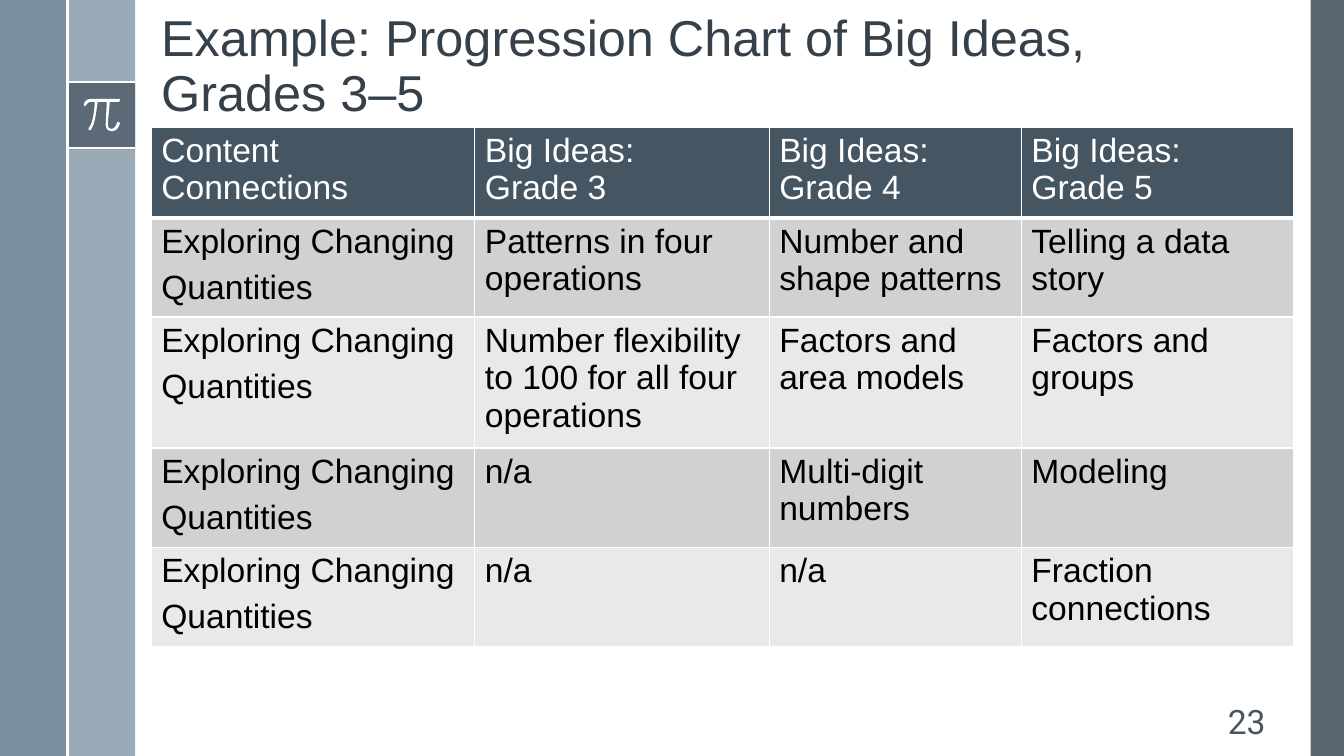
from lxml import etree
from pptx import Presentation
from pptx.dml.color import RGBColor
from pptx.enum.shapes import MSO_CONNECTOR, MSO_SHAPE
from pptx.enum.text import MSO_ANCHOR, PP_ALIGN
from pptx.oxml.ns import qn
from pptx.util import Inches, Pt

WHITE = RGBColor(0xFF, 0xFF, 0xFF)
BLACK = RGBColor(0x00, 0x00, 0x00)
SLATE = RGBColor(0x47, 0x55, 0x62)
STEEL = RGBColor(0x6A, 0x80, 0x93)
MIST = RGBColor(0x9B, 0xAA, 0xB7)
TITLE_COLOR = RGBColor(0x35, 0x40, 0x4A)
HEADER = RGBColor(0x46, 0x55, 0x62)
BANDS = (RGBColor(0xCF, 0xD1, 0xD3), RGBColor(0xE9, 0xE9, 0xEA))

TITLE = "Example: Progression Chart of Big Ideas, Grades 3–5"
PAGE_NUMBER = "23"
CONNECTION = "Exploring Changing\u00a0\nQuantities"
HEADINGS = ["Content Connections"] + [
    f"Big\u00a0Ideas:\u00a0\nGrade {grade}" for grade in (3, 4, 5)
]
BIG_IDEAS = [
    ("Patterns in four operations", "Number and shape patterns", "Telling a data story"),
    ("Number flexibility to 100 for all four operations", "Factors and area models", "Factors and groups"),
    ("n/a", "Multi-digit numbers", "Modeling"),
    ("n/a", "n/a", "Fraction connections"),
]
COLUMN_WIDTHS = (3.21, 2.92, 2.5, 2.7)
ROW_HEIGHTS = (0.39, 0.41, 0.41, 0.41, 0.41)

BARS = [
    (13, 0, 0.33, 7.5, SLATE, 90),
    (0.67, 0, 0.67, 7.5, MIST, 100),
    (0, 0, 0.67, 7.5, STEEL, 88),
    (0.67, 0.81, 0.67, 0.67, SLATE, 75),
]
RULES = [(0.67, 0.81, 1.34, 0.81), (0.67, 1.47, 1.34, 1.47), (0.67, 0, 0.67, 7.5)]

PI_START = (1.18, 0.98)
PI_OUTLINE = [
    (0.9, 0.98), (0.85, 0.98, 0.83, 1.03, 0.83, 1.04),
    (0.83, 1.04, 0.83, 1.05, 0.84, 1.05), (0.85, 1.05),
    (0.85, 1.05, 0.87, 1.01, 0.9, 1.01), (0.94, 1.01),
    (0.94, 1.05, 0.93, 1.22, 0.88, 1.27), (0.87, 1.28, 0.87, 1.28, 0.88, 1.29),
    (0.9, 1.29), (0.95, 1.23, 0.96, 1.05, 0.97, 1.01), (1.06, 1.01),
    (1.05, 1.22), (1.05, 1.22, 1.04, 1.26, 1.07, 1.29),
    (1.08, 1.3, 1.09, 1.3, 1.1, 1.3), (1.12, 1.3),
    (1.17, 1.3, 1.19, 1.23, 1.19, 1.22), (1.19, 1.22, 1.18, 1.21, 1.18, 1.21),
    (1.17, 1.21, 1.16, 1.21, 1.16, 1.22), (1.16, 1.22, 1.15, 1.27, 1.11, 1.28),
    (1.1, 1.28, 1.09, 1.28, 1.08, 1.27), (1.07, 1.26, 1.07, 1.23, 1.07, 1.22),
    (1.09, 1.01), (1.18, 1.01), (1.19, 1.01, 1.19, 1, 1.19, 1),
    (1.19, 0.99, 1.19, 0.98, 1.18, 0.98),
]


def paint(shape, color, opacity=100):
    shape.shadow.inherit = False
    shape.line.fill.background()
    shape.fill.solid()
    shape.fill.fore_color.rgb = color
    if opacity < 100:
        color_node = shape.fill._xPr.find(qn("a:solidFill"))[0]
        etree.SubElement(color_node, qn("a:alpha")).set("val", str(opacity * 1000))


def add_curved_outline(start, segments):
    builder = shapes.build_freeform(*map(Inches, start))
    builder.add_line_segments([tuple(map(Inches, segment[-2:])) for segment in segments])
    shape = builder.convert_to_shape()
    line_nodes = list(shape._element.iter(qn("a:lnTo")))
    for line_node, segment in zip(line_nodes, segments):
        if len(segment) == 2:
            continue
        curve = etree.Element(qn("a:cubicBezTo"))
        for x, y in zip(segment[::2], segment[1::2]):
            etree.SubElement(curve, qn("a:pt"), x=str(Inches(x) - shape.left), y=str(Inches(y) - shape.top))
        line_node.getparent().replace(line_node, curve)
    return shape


def write(text_frame, text, size, color, font="Arial", space_before=None):
    text_frame.word_wrap = True
    for index, line in enumerate(text.split("\n")):
        paragraph = text_frame.add_paragraph() if index else text_frame.paragraphs[0]
        if space_before is not None:
            paragraph.space_before = Pt(space_before)
        run = paragraph.add_run()
        run.text = line
        run.font.size = Pt(size)
        run.font.name = font
        run.font.bold = False
        run.font.color.rgb = color


def set_borders(cell, widths):
    properties = cell._tc.get_or_add_tcPr()
    for position, (side, width) in enumerate(widths.items()):
        border = etree.Element(qn(f"a:ln{side}"), w=str(Pt(width)))
        fill = etree.SubElement(border, qn("a:solidFill"))
        etree.SubElement(fill, qn("a:srgbClr"), val=str(WHITE))
        properties.insert(position, border)


presentation = Presentation()
presentation.slide_width = Inches(13.33)
presentation.slide_height = Inches(7.5)
slide = presentation.slides.add_slide(presentation.slide_layouts[6])
shapes = slide.shapes

for left, top, width, height, color, opacity in BARS:
    bar = shapes.add_shape(
        MSO_SHAPE.RECTANGLE, Inches(left), Inches(top), Inches(width), Inches(height)
    )
    paint(bar, color, opacity)

for ends in RULES:
    rule = shapes.add_connector(MSO_CONNECTOR.STRAIGHT, *map(Inches, ends))
    rule.line.color.rgb = WHITE
    rule.line.width = Pt(1.5)
    etree.SubElement(rule._element.spPr, qn("a:effectLst"))

paint(add_curved_outline(PI_START, PI_OUTLINE), WHITE)

title = shapes.add_textbox(Inches(1.5), Inches(-0.1), Inches(10.94), Inches(1.36))
title.text_frame.vertical_anchor = MSO_ANCHOR.BOTTOM
write(title.text_frame, TITLE, 36, TITLE_COLOR)
title.text_frame.paragraphs[0].line_spacing = 0.9

rows = [HEADINGS] + [(CONNECTION, *ideas) for ideas in BIG_IDEAS]
table = shapes.add_table(
    len(rows), len(COLUMN_WIDTHS), Inches(1.5), Inches(1.26),
    Inches(sum(COLUMN_WIDTHS)), Inches(sum(ROW_HEIGHTS)),
).table
table.horz_banding = False
for column, width in zip(table.columns, COLUMN_WIDTHS):
    column.width = Inches(width)
for row, height in zip(table.rows, ROW_HEIGHTS):
    row.height = Inches(height)
for row_index, texts in enumerate(rows):
    is_header = row_index == 0
    for column_index, text in enumerate(texts):
        cell = table.cell(row_index, column_index)
        is_connection = column_index == 0 and not is_header
        write(cell.text_frame, text, 24, WHITE if is_header else BLACK,
              space_before=6 if is_connection else 0)
        cell.fill.solid()
        cell.fill.fore_color.rgb = HEADER if is_header else BANDS[(row_index - 1) % 2]
        set_borders(cell, {"L": 1, "R": 1, "T": 3 if row_index == 1 else 1, "B": 3 if is_header else 1})

page_number = shapes.add_textbox(Inches(11.77), Inches(6.95), Inches(0.88), Inches(0.4))
page_number.text_frame.vertical_anchor = MSO_ANCHOR.MIDDLE
write(page_number.text_frame, PAGE_NUMBER, 24, HEADER, "Roboto")
page_number.text_frame.paragraphs[0].alignment = PP_ALIGN.RIGHT

presentation.save("out.pptx")
